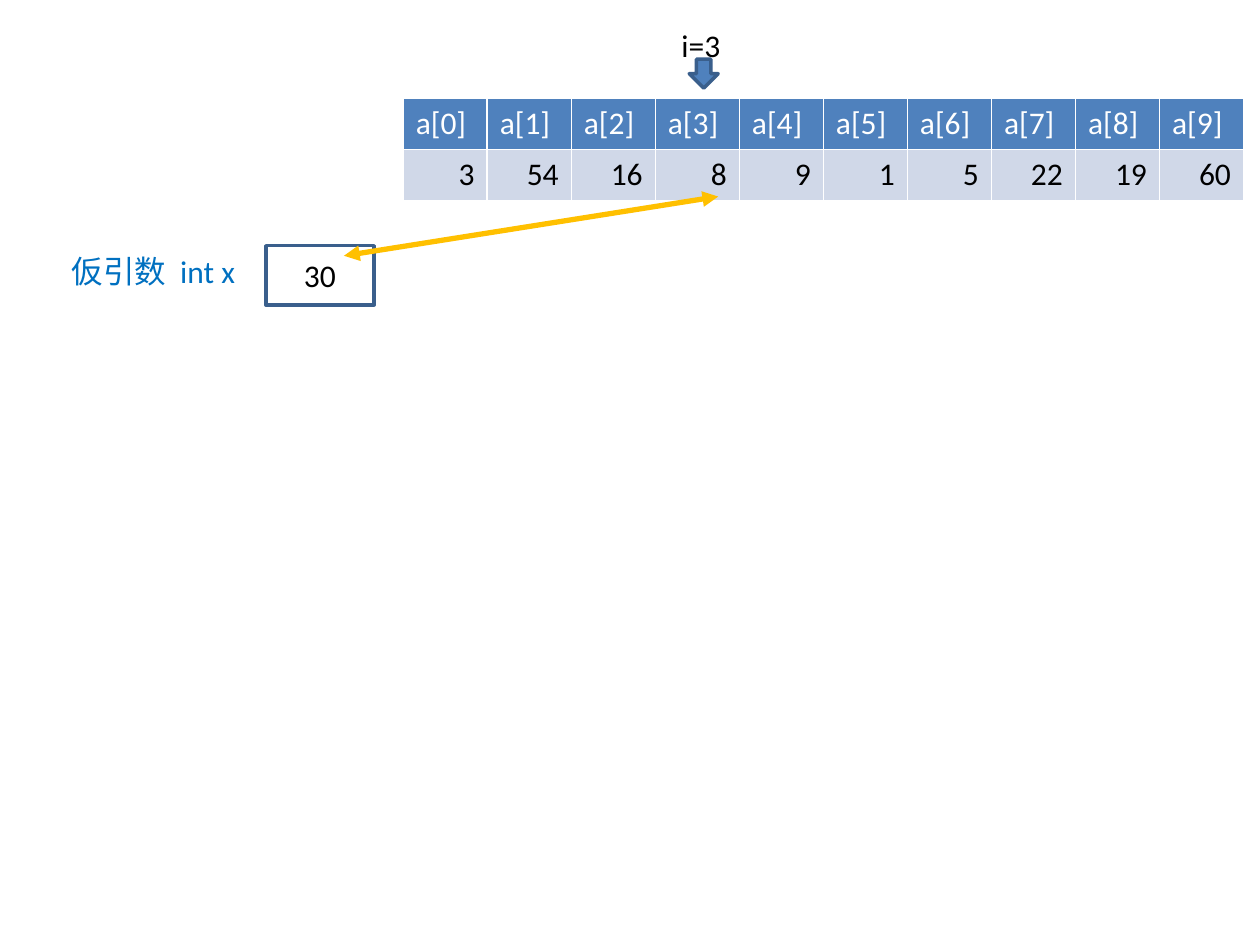
"""Build a slide showing element a[3] of an array exchanged with parameter x."""
from dataclasses import dataclass

from lxml.etree import SubElement
from pptx import Presentation
from pptx.dml.color import RGBColor as Color
from pptx.enum.shapes import MSO_CONNECTOR as Connector, MSO_SHAPE as Shape
from pptx.enum.text import MSO_ANCHOR as Anchor, PP_ALIGN as Align
from pptx.oxml.ns import qn
from pptx.util import Inches, Pt


@dataclass(frozen=True)
class Theme:
    font: str = "Calibri"
    size: int = 18
    white: Color = Color.from_string("FFFFFF")
    black: Color = Color.from_string("000000")
    blue: Color = Color.from_string("4F81BD")
    outline: Color = Color.from_string("3A5F8C")
    pale: Color = Color.from_string("D0D8E8")
    label: Color = Color.from_string("0070C0")
    arrow: Color = Color.from_string("FFC000")


theme = Theme()
presentation = Presentation()
presentation.slide_width, presentation.slide_height = Inches(10), Inches(7.5)
slide = presentation.slides.add_slide(presentation.slide_layouts[6])


def write(frame, text, color=theme.black, align=Align.LEFT, anchor=Anchor.TOP, wrap=True):
    frame.word_wrap = wrap
    frame.vertical_anchor = anchor
    paragraph = frame.paragraphs[0]
    paragraph.alignment = align
    run = paragraph.add_run()
    run.text = text
    run.font.name, run.font.size = theme.font, Pt(theme.size)
    run.font.bold = False
    run.font.color.rgb = color


def add_block(kind, box, fill, line=None):
    shape = slide.shapes.add_shape(kind, *map(Inches, box))
    shape.shadow.inherit = False
    shape.fill.solid()
    shape.fill.fore_color.rgb = fill
    if line is None:
        shape.line.fill.background()
    else:
        shape.line.color.rgb = line
        shape.line.width = Pt(2)
    return shape


values = [3, 54, 16, 8, 9, 1, 5, 22, 19, 60]
rows = [
    ([f"a[{index}]" for index in range(len(values))], theme.blue, theme.white, Align.LEFT),
    ([str(value) for value in values], theme.pale, theme.black, Align.RIGHT),
]
table_box = map(Inches, (3.2, 0.78, 6.67, 0.81))
table = slide.shapes.add_table(len(rows), len(values), *table_box).table
for row, (texts, fill, color, align) in enumerate(rows):
    for column, text in enumerate(texts):
        cell = table.cell(row, column)
        properties = cell._tc.get_or_add_tcPr()
        for side in ("a:lnL", "a:lnR", "a:lnT", "a:lnB"):
            border = SubElement(properties, qn(side), w=str(Pt(1)))
            solid = SubElement(border, qn("a:solidFill"))
            SubElement(solid, qn("a:srgbClr"), val=str(theme.white))
        cell.fill.solid()
        cell.fill.fore_color.rgb = fill
        write(cell.text_frame, text, color=color, align=align)

value_box = add_block(Shape.RECTANGLE, (2.11, 1.95, 0.86, 0.47), theme.white, theme.outline)
write(value_box.text_frame, "30", align=Align.CENTER, anchor=Anchor.MIDDLE)

parameter_label = add_block(Shape.RECTANGLE, (0.47, 1.95, 1.51, 0.4), theme.white)
write(parameter_label.text_frame, "仮引数  int x", color=theme.label)

add_block(Shape.DOWN_ARROW, (5.47, 0.47, 0.23, 0.23), theme.blue, theme.outline)

exchange_ends = map(Inches, (5.7, 1.56, 2.73, 2.03))
exchange = slide.shapes.add_connector(Connector.STRAIGHT, *exchange_ends)
exchange.line.color.rgb = theme.arrow
exchange.line.width = Pt(3)
for end in ("a:headEnd", "a:tailEnd"):
    SubElement(exchange.line._get_or_add_ln(), qn(end), type="triangle")
SubElement(exchange._element.spPr, qn("a:effectLst"))

index_label = slide.shapes.add_textbox(*map(Inches, (5.31, 0.16, 0.51, 0.4)))
write(index_label.text_frame, "i=3", wrap=False)

presentation.save("out.pptx")
